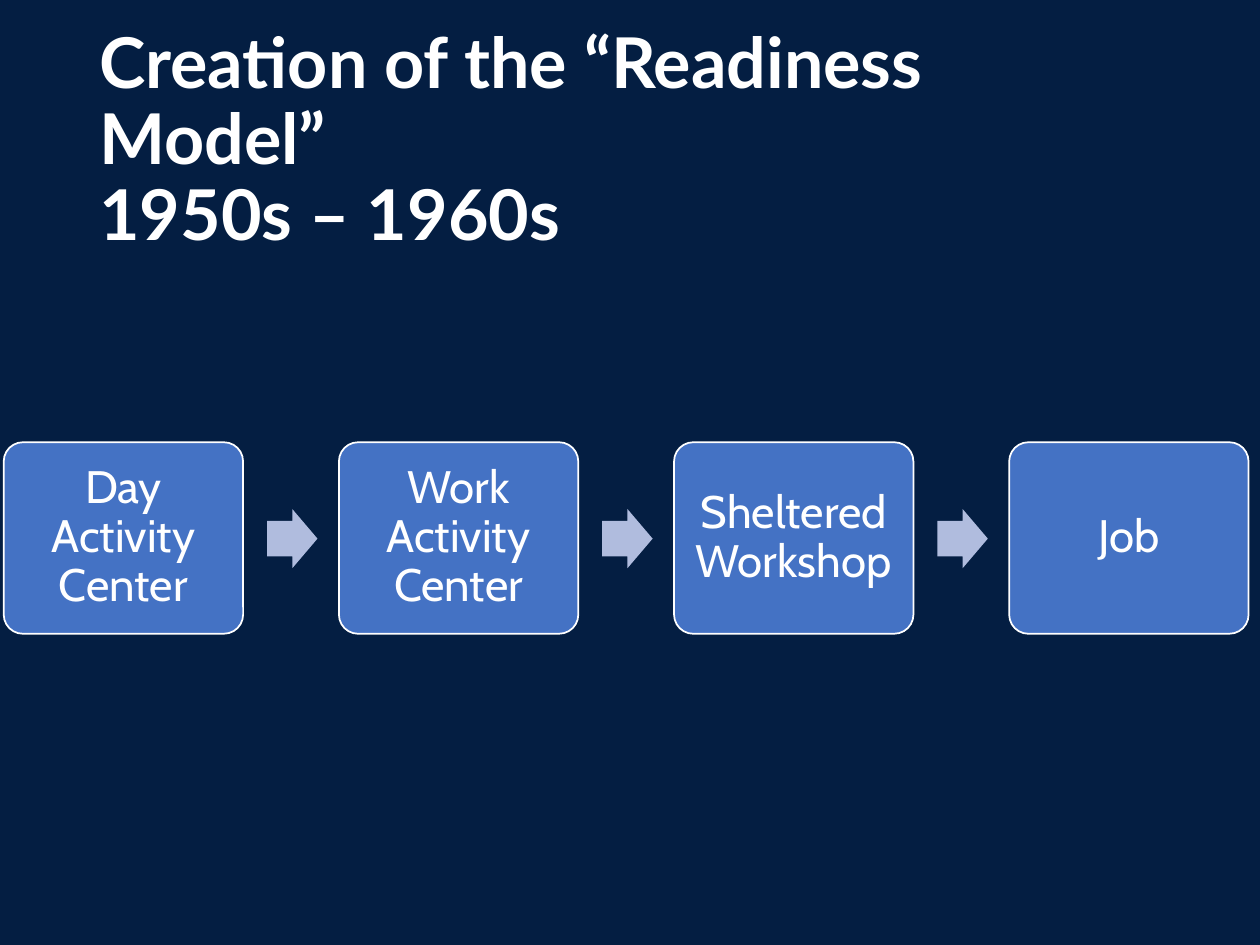
from pptx import Presentation
from pptx.dml.color import RGBColor
from pptx.enum.shapes import MSO_SHAPE
from pptx.enum.text import MSO_ANCHOR, PP_ALIGN
from pptx.util import Inches, Pt


def color(value):
    return RGBColor.from_string(value)


def write(shape, text, font, size, align, bold=False):
    frame = shape.text_frame
    frame.word_wrap = True
    frame.vertical_anchor = MSO_ANCHOR.MIDDLE
    frame.text = text
    paragraph = frame.paragraphs[0]
    paragraph.alignment = align
    paragraph.line_spacing = 0.9
    for span in paragraph.runs:
        span.font.name = font
        span.font.size = Pt(size)
        span.font.bold = bold
        span.font.color.rgb = color("FFFFFF")


deck = Presentation()
deck.slide_width = Inches(10)
deck.slide_height = Inches(7.5)
page = deck.slides.add_slide(deck.slide_layouts[6])
page.background.fill.solid()
page.background.fill.fore_color.rgb = color("041E42")

# Title
title = page.shapes.add_textbox(Inches(0.69), Inches(0.4), Inches(8.62), Inches(1.45))
write(title, "Creation of the “Readiness Model”\v1950s – 1960s", "Lato", 40, PP_ALIGN.LEFT, bold=True)

# Steps from left to right, with an arrow after each but the last
steps = ["Day Activity Center", "Work Activity Center", "Sheltered Workshop", "Job"]
first_left, pitch = 0.03, 2.66
for index, step in enumerate(steps):
    left = first_left + index * pitch
    box = page.shapes.add_shape(
        MSO_SHAPE.ROUNDED_RECTANGLE, Inches(left), Inches(3.51), Inches(1.9), Inches(1.52))
    box.adjustments[0] = 0.1
    box.shadow.inherit = False
    box.fill.solid()
    box.fill.fore_color.rgb = color("4472C4")
    box.line.color.rgb = color("FFFFFF")
    box.line.width = Pt(1)
    frame = box.text_frame
    frame.margin_left = frame.margin_right = Inches(0.12)
    frame.margin_top = frame.margin_bottom = Inches(0.12)
    write(box, step, "Cabin", 26, PP_ALIGN.CENTER)

    if index < len(steps) - 1:
        arrow = page.shapes.add_shape(
            MSO_SHAPE.RIGHT_ARROW, Inches(left + 2.09), Inches(4.04), Inches(0.4), Inches(0.47))
        arrow.adjustments[0] = 0.6
        arrow.adjustments[1] = 0.5
        arrow.shadow.inherit = False
        arrow.fill.solid()
        arrow.fill.fore_color.rgb = color("B0BCDE")
        arrow.line.fill.background()

deck.save("out.pptx")
